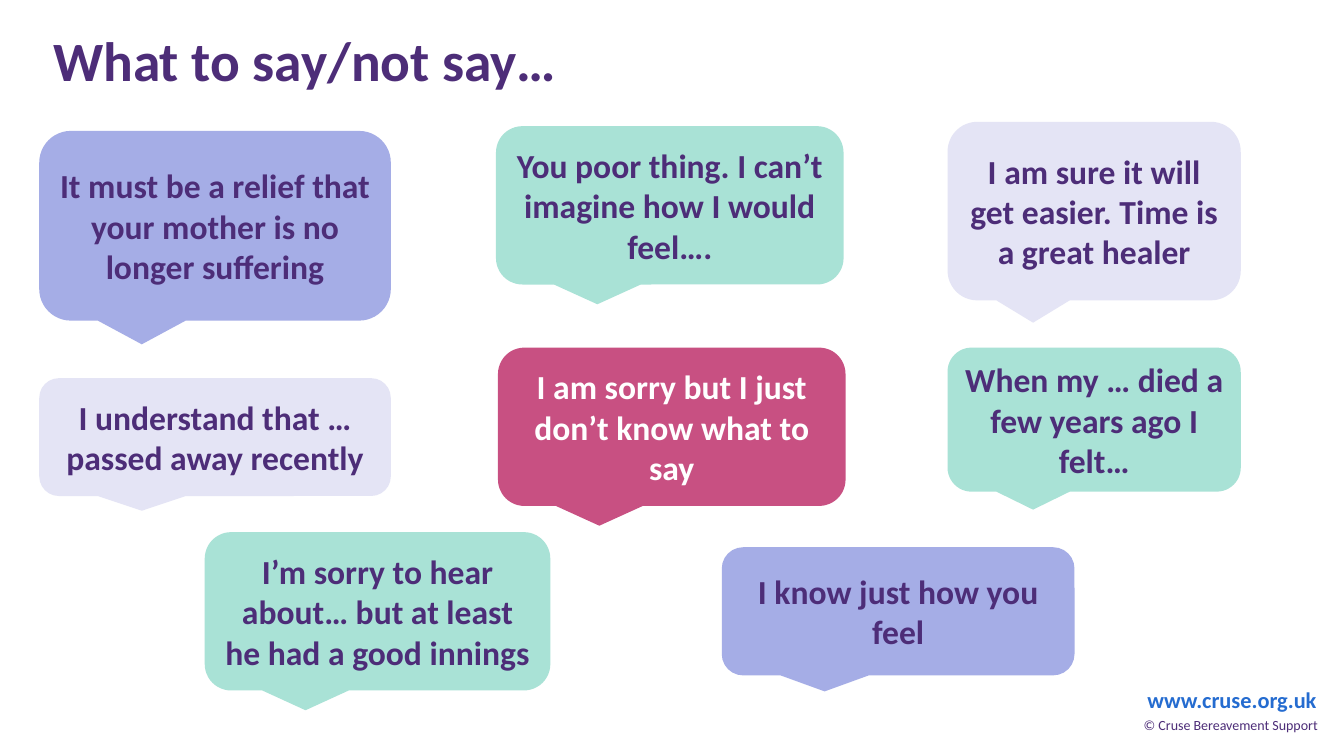
from pptx import Presentation
from pptx.dml.color import RGBColor
from pptx.enum.shapes import MSO_SHAPE as Shape
from pptx.enum.text import MSO_ANCHOR as Anchor, PP_ALIGN as Align
from pptx.util import Cm, Pt

# Content
PURPLE, BLUE, WHITE = "4D2D78", "256CD0", "FFFFFF"
PERIWINKLE, MINT, LAVENDER, ROSE = "A5ADE6", "A9E2D6", "E4E4F5", "C85082"

TITLE = "What to say/not say…"
TITLE_BOX = (1.09, 0.71, 18.97, 1.78)

# Text, size, colour, bold, (left, top, width, height) in cm
FOOTER = [
    ("www.cruse.org.uk", 16, BLUE, True, (28.6, 17.17, 4.9, 0.94)),
    ("© Cruse Bereavement Support", 10, PURPLE, False, (28.45, 17.93, 5.13, 1.12)),
]

# Text, fill, text colour, (left, top, width, height) in cm
BUBBLES = [
    ("It must be a relief that your mother is no longer suffering",
     PERIWINKLE, PURPLE, (0.99, 3.3, 8.86, 4.78)),
    ("You poor thing. I can’t imagine how I would feel….",
     MINT, PURPLE, (12.5, 3.18, 8.76, 3.99)),
    ("I am sure it will get easier. Time is a great healer",
     LAVENDER, PURPLE, (23.88, 3.07, 7.39, 4.5)),
    ("I know just how you feel",
     PERIWINKLE, PURPLE, (18.19, 13.79, 8.89, 3.23)),
    ("I am sorry but I just don’t know what to say",
     ROSE, WHITE, (12.55, 8.76, 8.76, 3.99)),
    ("When my … died a few years ago I felt…",
     MINT, PURPLE, (23.88, 8.76, 7.39, 3.63)),
    ("I’m sorry to hear about… but at least he had a good innings",
     MINT, PURPLE, (5.16, 13.41, 8.71, 3.99)),
    ("I understand that … passed away recently",
     LAVENDER, PURPLE, (0.99, 9.53, 8.86, 2.97)),
]


def colour(value):
    return RGBColor.from_string(value)


def write(shape, text, size, text_colour, bold=True, align=Align.CENTER,
          anchor=Anchor.MIDDLE, spacing=1.0):
    frame = shape.text_frame
    paragraph = frame.paragraphs[0]
    paragraph.text = text
    font = paragraph.runs[0].font
    formats = [
        (frame, {"word_wrap": True, "vertical_anchor": anchor}),
        (paragraph, {"alignment": align, "line_spacing": spacing}),
        (font, {"name": "Calibri", "size": Pt(size), "bold": bold}),
    ]
    for target, values in formats:
        for name, value in values.items():
            setattr(target, name, value)
    font.color.rgb = colour(text_colour)


def add_bubble(slide, text, fill, text_colour, box):
    shape = slide.shapes.add_shape(Shape.ROUNDED_RECTANGULAR_CALLOUT, *map(Cm, box))
    shape.shadow.inherit = False
    shape.fill.solid()
    shape.fill.fore_color.rgb = colour(fill)
    shape.line.fill.background()
    write(shape, text, 24, text_colour)


def main():
    presentation = Presentation()
    presentation.slide_width, presentation.slide_height = Cm(33.87), Cm(19.05)
    slide = presentation.slides.add_slide(presentation.slide_layouts[6])

    # Footer
    for text, size, text_colour, bold, box in FOOTER:
        shape = slide.shapes.add_textbox(*map(Cm, box))
        write(shape, text, size, text_colour, bold, anchor=Anchor.TOP)

    # Speech bubbles
    for bubble in BUBBLES:
        add_bubble(slide, *bubble)

    # Title
    title = slide.shapes.add_textbox(*map(Cm, TITLE_BOX))
    write(title, TITLE, 39.6, PURPLE, align=Align.LEFT, spacing=0.9)

    presentation.save("out.pptx")


if __name__ == "__main__":
    main()
